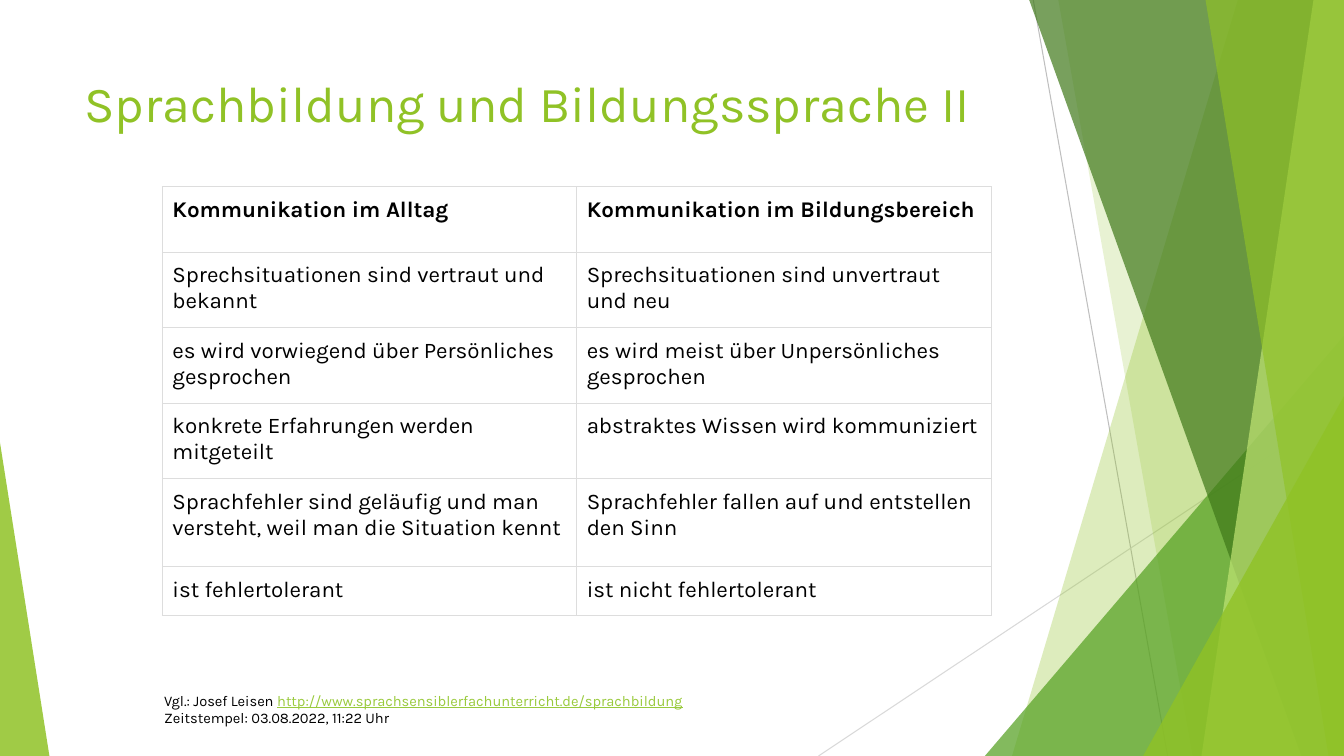
from lxml.etree import SubElement as Sub
from pptx import Presentation as Deck
from pptx.dml.color import RGBColor
from pptx.enum.shapes import MSO_CONNECTOR as Link, MSO_SHAPE as Shape
from pptx.enum.text import MSO_ANCHOR as Anchor
from pptx.oxml.ns import qn
from pptx.util import Inches, Pt

WIDE, HIGH = Inches(13.333), Inches(7.5)
FONT = "Karla"
BLACK = RGBColor(0x00, 0x00, 0x00)
WHITE = RGBColor(0xFF, 0xFF, 0xFF)
GRID = RGBColor(0xDD, 0xDD, 0xDD)
GREY = RGBColor(0xBF, 0xBF, 0xBF)
PALE = RGBColor(0xD9, 0xD9, 0xD9)
LIME = RGBColor(0x90, 0xC2, 0x26)
LEAF = RGBColor(0x54, 0xA0, 0x21)
MOSS = RGBColor(0x3F, 0x78, 0x19)
MINT = RGBColor(0xC0, 0xE4, 0x74)
URL = RGBColor(0x99, 0xCA, 0x3C)

ROWS = [
    (8.67, "Kommunikation im Alltag", "Kommunikation im Bildungsbereich"),
    (10, "Sprechsituationen sind vertraut und bekannt",
     "Sprechsituationen sind unvertraut und neu"),
    (10, "es wird vorwiegend über Persönliches gesprochen",
     "es wird meist über Unpersönliches gesprochen"),
    (10, "konkrete Erfahrungen werden mitgeteilt",
     "abstraktes Wissen wird kommuniziert"),
    (11.6, "Sprachfehler sind geläufig und man versteht, weil man die Situation kennt",
     "Sprachfehler fallen auf und entstellen den Sinn"),
    (6.53, "ist fehlertolerant", "ist nicht fehlertolerant"),
]


def across(share):
    return round(WIDE * share / 100)


def down(share):
    return round(HIGH * share / 100)


def box(left, top, width, height):
    return across(left), down(top), across(width), down(height)


def style(font, size, color, bold=False):
    font.name = FONT
    font.size = Pt(size)
    font.color.rgb = color
    font.bold = bold


def tint(shape, color, share):
    shape.shadow.inherit = False
    shape.line.fill.background()
    shape.fill.solid()
    shape.fill.fore_color.rgb = color
    tone = shape.element.spPr.find(qn("a:solidFill"))[0]
    Sub(tone, qn("a:alpha"), val=str(share * 1000))


def add_line(slide, start, end, color):
    line = slide.shapes.add_connector(
        Link.STRAIGHT, across(start[0]), down(start[1]), across(end[0]), down(end[1]))
    line.line.color.rgb = color
    line.line.width = Pt(0.75)
    Sub(line.element.spPr, qn("a:effectLst"))


def add_band(slide, top, base, color, share):
    pen = slide.shapes.build_freeform(across(top), 0)
    pen.add_line_segments([(WIDE, 0), (WIDE, HIGH), (across(base), HIGH)])
    tint(pen.convert_to_shape(), color, share)


def add_wedge(slide, left, top, width, peak, color, share):
    wedge = slide.shapes.add_shape(
        Shape.ISOSCELES_TRIANGLE, *box(left, top, width, 100 - top))
    wedge.adjustments[0] = peak
    tint(wedge, color, share)


def add_text(slide, *area):
    frame = slide.shapes.add_textbox(*box(*area)).text_frame
    frame.word_wrap = True
    return frame.paragraphs[0]


def add_edges(cell):
    props = cell._tc.get_or_add_tcPr()
    for side in ("lnL", "lnR", "lnT", "lnB"):
        edge = Sub(props, qn(f"a:{side}"), w=str(Pt(0.75)))
        Sub(Sub(edge, qn("a:solidFill")), qn("a:srgbClr"), val=str(GRID))


def fill_cell(cell, text, bold):
    add_edges(cell)
    cell.fill.solid()
    cell.fill.fore_color.rgb = WHITE
    cell.vertical_anchor = Anchor.TOP
    cell.margin_left = cell.margin_right = Inches(0.1)
    cell.margin_top = cell.margin_bottom = Inches(0.1)
    cell.text = text
    style(cell.text_frame.paragraphs[0].font, 16, BLACK, bold)


def add_grid(slide):
    height = sum(row[0] for row in ROWS)
    table = slide.shapes.add_table(
        len(ROWS), 2, *box(12.08, 24.67, 61.66, height)).table
    table.first_row = table.horz_banding = False
    for r, (tall, *texts) in enumerate(ROWS):
        table.rows[r].height = down(tall)
        for c, text in enumerate(texts):
            fill_cell(table.cell(r, c), text, r == 0)


def add_art(slide):
    add_line(slide, (76.88, 0), (86.88, 100), GREY)
    add_line(slide, (100, 53.73), (60.9, 100), PALE)
    add_band(slide, 92.1, 75.3, LIME, 30)
    add_band(slide, 78.75, 88.73, LIME, 20)
    add_wedge(slide, 73.28, 44.4, 26.72, 1, LEAF, 72)
    add_band(slide, 76.58, 96.83, MOSS, 70)
    add_band(slide, 97.73, 89.4, MINT, 70)
    add_band(slide, 89.7, 98.85, LIME, 65)
    add_wedge(slide, 85.05, 52.4, 14.95, 1, LIME, 80)
    add_wedge(slide, 0, 58.53, 3.68, 0, LIME, 85)


def add_title(slide):
    title = add_text(slide, 5.55, 8.93, 70.5, 19.2)
    title.text = "Sprachbildung und Bildungssprache II"
    style(title.font, 36, LIME)


def add_source(slide):
    note = add_text(slide, 11.48, 90.8, 44.4, 6)
    style(note.font, 10.5, BLACK)
    note.add_run().text = "Vgl.: Josef Leisen "
    site = note.add_run()
    site.text = "http://www.sprachsensiblerfachunterricht.de/sprachbildung"
    note.add_line_break()
    note.add_run().text = "Zeitstempel: 03.08.2022, 11:22 Uhr"
    for run in note.runs:
        style(run.font, 10.5, BLACK)
    site.font.color.rgb = URL
    site.font.underline = True


def main():
    deck = Deck()
    deck.slide_width, deck.slide_height = WIDE, HIGH
    slide = deck.slides.add_slide(deck.slide_layouts[6])
    add_art(slide)
    add_title(slide)
    add_grid(slide)
    add_source(slide)
    deck.save("out.pptx")


if __name__ == "__main__":
    main()
